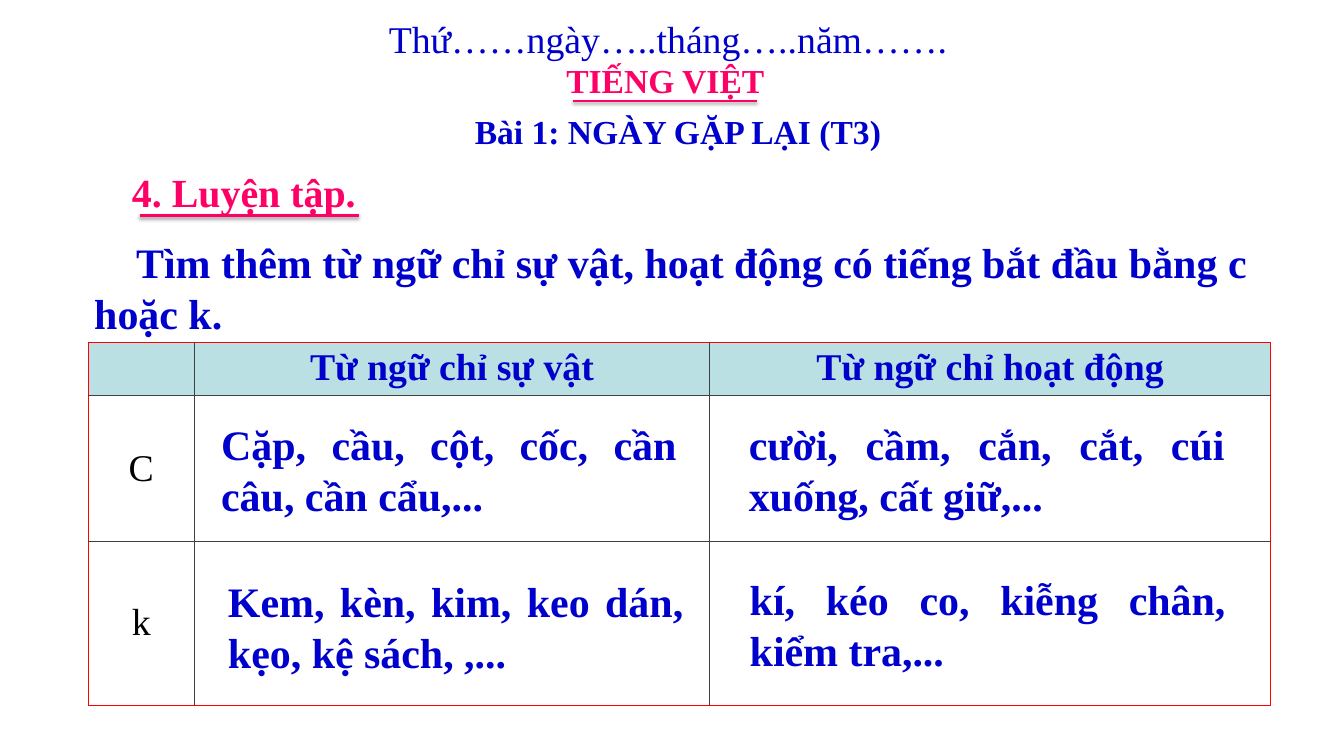
from lxml.etree import SubElement
from pptx import Presentation
from pptx.dml.color import RGBColor
from pptx.enum.shapes import MSO_CONNECTOR
from pptx.enum.text import MSO_ANCHOR, PP_ALIGN
from pptx.oxml.ns import qn
from pptx.util import Cm, Pt

COLORS = {"blue": "0000CC", "pink": "FF0066", "black": "000000",
          "header": "BBE0E3", "border": "FF0000", "grid": "404040"}
FONT = "Times New Roman"
COLUMNS = (3.56, 17.35, 18.85)
ROWS = (1.73, 4.9, 5.51)
HEADERS = ("", "Từ ngữ chỉ sự vật", "Từ ngữ chỉ hoạt động")
LETTERS = ("C", "k")
ANSWERS = (
    (4.22, 2.44, 15.82, "Cặp, cầu, cột, cốc, cần câu, cần cẩu,..."),
    (4.45, 7.72, 15.82, "Kem, kèn, kim, keo dán, kẹo, kệ sách, ,..."),
    (21.97, 2.44, 16.51, "cười, cầm, cắn, cắt, cúi xuống, cất giữ,..."),
    (22, 7.65, 16.51, "kí, kéo co, kiễng chân, kiểm tra,..."),
)


def write(text_frame, text, size, color, bold=True, align=PP_ALIGN.LEFT):
    """Set one formatted paragraph and return it."""
    text_frame.text = text
    paragraph = text_frame.paragraphs[0]
    paragraph.alignment = align
    for run in paragraph.runs:
        run.font.name = FONT
        run.font.size = Pt(size)
        run.font.bold = bold
        run.font.color.rgb = RGBColor.from_string(COLORS[color])
    return paragraph


def add_text(slide, box, text, size, color, wrap=True, **style):
    """Add a text box and return its paragraph."""
    text_frame = slide.shapes.add_textbox(*map(Cm, box)).text_frame
    text_frame.word_wrap = wrap
    return write(text_frame, text, size, color, **style)


def add_underline(slide, left, top, width, weight, opacity):
    """Draw a pink rule with a soft shadow below it."""
    line = slide.shapes.add_connector(
        MSO_CONNECTOR.STRAIGHT, Cm(left), Cm(top), Cm(left + width), Cm(top))
    line.line.color.rgb = RGBColor.from_string(COLORS["pink"])
    line.line.width = Pt(weight)
    effects = SubElement(line._element.spPr, qn("a:effectLst"))
    shadow = SubElement(effects, qn("a:outerShdw"), blurRad=str(Pt(3.1)),
                        dist=str(Pt(1.7)), dir="5400000", rotWithShape="0")
    color = SubElement(shadow, qn("a:srgbClr"), val=COLORS["black"])
    SubElement(color, qn("a:alpha"), val=str(opacity * 1000))


def add_heading(slide, left, top):
    """Place the date, the subject and the lesson title."""
    add_text(slide, (left, top, 19.48, 1.8), "Thứ……ngày…..tháng…..năm…….",
             36, "blue", wrap=False, bold=False)
    add_text(slide, (left + 5.97, top + 1.49, 7.24, 1.63), "TIẾNG VIỆT",
             32, "pink", wrap=False)
    add_underline(slide, left + 6.45, top + 2.99, 6.2, 2, 38)
    title = slide.shapes.title
    title.left, title.top = Cm(left + 2.36), Cm(top + 3.12)
    title.width, title.height = Cm(15.24), Cm(1.78)
    text_frame = title.text_frame
    text_frame.word_wrap = True
    text_frame.vertical_anchor = MSO_ANCHOR.TOP
    text_frame.margin_left = text_frame.margin_right = Cm(0.41)
    text_frame.margin_top = text_frame.margin_bottom = Cm(0.2)
    paragraph = write(text_frame, "Bài 1: NGÀY GẶP LẠI (T3)", 32, "blue",
                      align=PP_ALIGN.CENTER)
    paragraph.line_spacing = 1.0
    paragraph.space_before = Pt(0)


def add_exercise(slide, left, top):
    """Place the section heading and the task below it."""
    add_text(slide, (left + 1.27, top, 11.63, 1.88), "4. Luyện tập.",
             38, "pink")
    add_underline(slide, left + 1.78, top + 1.75, 7.36, 3, 35)
    paragraph = add_text(
        slide, (left, top + 2.34, 39.8, 3.68),
        "Tìm thêm từ ngữ chỉ sự vật, hoạt động có tiếng bắt đầu bằng c hoặc k.",
        40, "blue")
    paragraph._p.get_or_add_pPr().set("indent", str(Cm(1.41)))


def set_borders(cell, outer_sides):
    """Draw outer sides in red and inner sides in dark grey."""
    properties = cell._tc.get_or_add_tcPr()
    for index, side in enumerate(("lnL", "lnR", "lnT", "lnB")):
        border = SubElement(properties, qn(f"a:{side}"), w=str(Pt(1)))
        fill = SubElement(border, qn("a:solidFill"))
        color = COLORS["border" if side in outer_sides else "grid"]
        SubElement(fill, qn("a:srgbClr"), val=color)
        properties.insert(index, border)


def add_word_table(slide, left, top):
    """Place the word table and the answers over its cells."""
    table = slide.shapes.add_table(
        len(ROWS), len(COLUMNS), Cm(left), Cm(top),
        Cm(sum(COLUMNS)), Cm(sum(ROWS))).table
    table.first_row = table.horz_banding = False
    for column, width in zip(table.columns, COLUMNS):
        column.width = Cm(width)
    for row, height in zip(table.rows, ROWS):
        row.height = Cm(height)
    for row in range(len(ROWS)):
        for column in range(len(COLUMNS)):
            cell = table.cell(row, column)
            if row == 0:
                cell.fill.solid()
                cell.fill.fore_color.rgb = RGBColor.from_string(COLORS["header"])
                write(cell.text_frame, HEADERS[column], 36, "blue",
                      align=PP_ALIGN.CENTER)
            else:
                cell.fill.background()
            if row and column == 0:
                cell.vertical_anchor = MSO_ANCHOR.MIDDLE
                write(cell.text_frame, LETTERS[row - 1], 36, "black",
                      bold=False, align=PP_ALIGN.CENTER)
            edges = {"lnL": column == 0, "lnR": column == len(COLUMNS) - 1,
                     "lnT": row == 0, "lnB": row == len(ROWS) - 1}
            set_borders(cell, [side for side, outer in edges.items() if outer])
    for x, y, width, text in ANSWERS:
        add_text(slide, (left + x, top + y, width, 3.68), text, 40, "blue",
                 align=PP_ALIGN.JUSTIFY)


def main():
    """Build and save the lesson slide."""
    presentation = Presentation()
    presentation.slide_width, presentation.slide_height = Cm(45.21), Cm(25.4)
    slide = presentation.slides.add_slide(presentation.slide_layouts[5])
    add_heading(slide, 12.83, 0.41)
    add_exercise(slide, 2.92, 5.51)
    add_word_table(slide, 2.97, 11.53)
    presentation.save("out.pptx")


if __name__ == "__main__":
    main()
